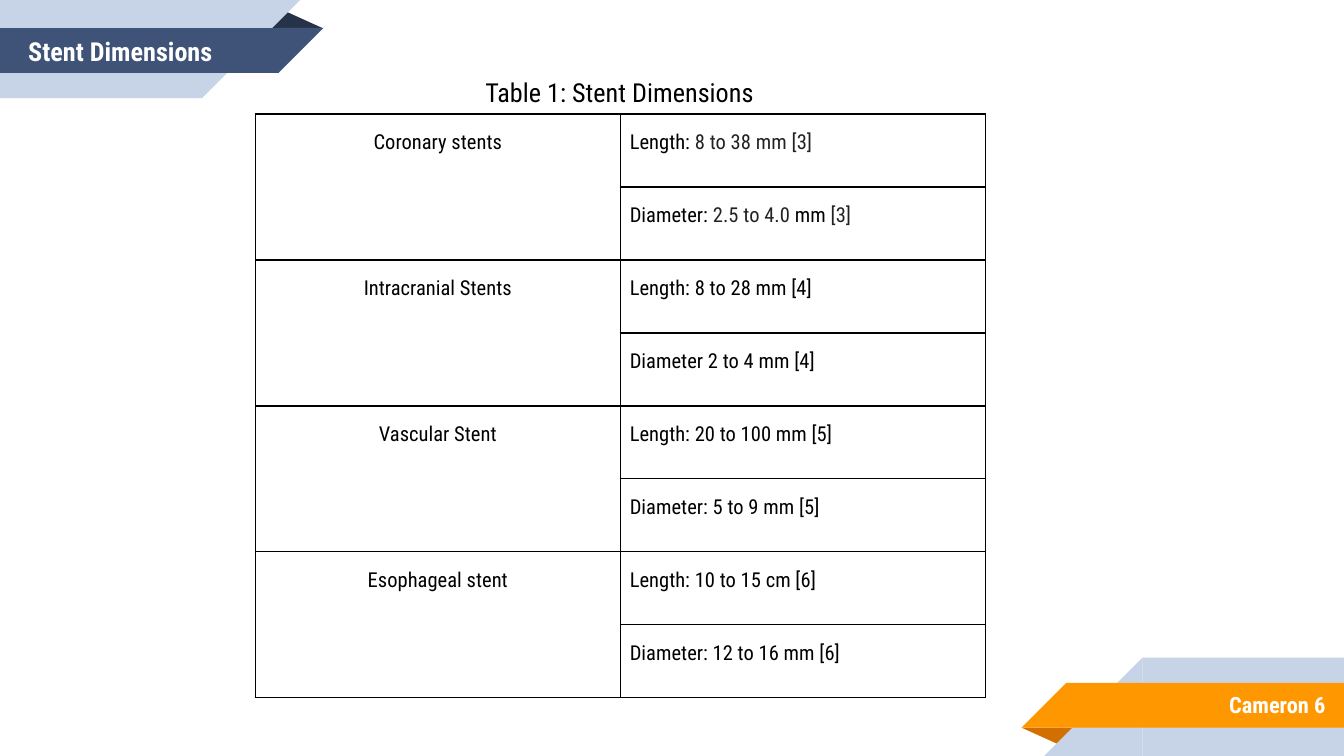
import pptx
import pptx.util
import pptx.dml.color
import pptx.enum.shapes
import pptx.enum.text
import pptx.oxml
import pptx.oxml.ns

Pt = pptx.util.Pt
SHAPE = pptx.enum.shapes.MSO_SHAPE
ALIGN = pptx.enum.text.PP_ALIGN
ANCHOR = pptx.enum.text.MSO_ANCHOR
FONT = "Roboto Condensed"


def color(hex_string):
    return pptx.dml.color.RGBColor.from_string(hex_string)


def write_text(shape, text, size, text_color, align, anchor, bold=False):
    frame = shape.text_frame
    frame.word_wrap = True
    frame.auto_size = pptx.enum.text.MSO_AUTO_SIZE.NONE
    frame.vertical_anchor = anchor
    frame.margin_left = frame.margin_right = Pt(7.2)
    frame.margin_top = frame.margin_bottom = Pt(7.2)
    frame.text = text
    paragraph = frame.paragraphs[0]
    paragraph.alignment = align
    paragraph.font.name = FONT
    paragraph.font.size = Pt(size)
    paragraph.font.bold = bold
    paragraph.font.color.rgb = color(text_color)


presentation = pptx.Presentation()
presentation.slide_width = Pt(720)
presentation.slide_height = Pt(405)
slide = presentation.slides.add_slide(presentation.slide_layouts[5])

# Corner ribbons: preset, left, top, width, height, rotation, mirrored, fill
ribbon_parts = [
    (SHAPE.ISOSCELES_TRIANGLE, 142.4, 5.8, 30.7, 9.4, 0, False, "263248"),
    (SHAPE.RECTANGLE, 0, 0, 108.2, 52.6, 180, True, "C7D3E6"),
    (SHAPE.RIGHT_TRIANGLE, 108.2, 0, 52.6, 52.6, 180, True, "C7D3E6"),
    (SHAPE.RECTANGLE, 0, 15, 149.4, 24, 180, True, "3F5378"),
    (SHAPE.RIGHT_TRIANGLE, 149.2, 15, 24, 24, 180, True, "3F5378"),
    (SHAPE.ISOSCELES_TRIANGLE, 547.2, 389.8, 30.7, 9.4, 180, False, "D26F00"),
    (SHAPE.RECTANGLE, 612, 352.4, 108, 52.6, 0, True, "C7D3E6"),
    (SHAPE.RIGHT_TRIANGLE, 559.4, 352.4, 52.6, 52.6, 0, True, "C7D3E6"),
    (SHAPE.RECTANGLE, 571, 365.8, 149.4, 24, 0, True, "FF9800"),
    (SHAPE.RIGHT_TRIANGLE, 547.2, 365.8, 24, 24, 0, True, "FF9800"),
]
for preset, left, top, width, height, rotation, mirrored, fill in ribbon_parts:
    shape = slide.shapes.add_shape(preset, Pt(left), Pt(top), Pt(width), Pt(height))
    shape.shadow.inherit = False
    shape.fill.solid()
    shape.fill.fore_color.rgb = color(fill)
    shape.line.fill.background()
    shape.rotation = rotation
    if mirrored:
        shape._element.spPr.find(pptx.oxml.ns.qn("a:xfrm")).set("flipH", "1")
    if preset == SHAPE.ISOSCELES_TRIANGLE:
        shape.adjustments[0] = 0.324

# Page label
page_label = slide.shapes.add_textbox(Pt(599.8), Pt(365), Pt(117.4), Pt(25.2))
write_text(page_label, "Cameron 6", 12, "FFFFFF", ALIGN.RIGHT, ANCHOR.MIDDLE, True)

# Table contents: each stent has two rows, each made of (text, colour) runs
BLACK, GRAY = "000000", "222222"
stents = [
    ("Coronary stents", [
        [("Length: ", BLACK), ("8 to 38 mm", GRAY), (" ", BLACK), ("[3]", GRAY)],
        [("Diameter: ", BLACK), ("2.5 to 4.0", GRAY), (" mm ", BLACK), ("[3]", GRAY)],
    ]),
    ("Intracranial Stents", [
        [("Length: 8 to 28 mm [4]", BLACK)], [("Diameter 2 to 4 mm [4]", BLACK)]]),
    ("Vascular Stent", [
        [("Length: 20 to 100 mm [5]", BLACK)], [("Diameter: 5 to 9 mm [5]", BLACK)]]),
    ("Esophageal stent", [
        [("Length: 10 to 15 cm [6]", BLACK)], [("Diameter: 12 to 16 mm [6]", BLACK)]]),
]

# Table
row_count = 2 * len(stents)
table = slide.shapes.add_table(
    row_count, 2, Pt(136.8), Pt(61), Pt(391.2), Pt(39.1 * row_count)).table
table.first_row = table.horz_banding = False
for column in table.columns:
    column.width = Pt(195.6)
for row in table.rows:
    row.height = Pt(39.1)

entries = {}
for index, (name, dimensions) in enumerate(stents):
    table.cell(2 * index, 0).merge(table.cell(2 * index + 1, 0))
    entries[2 * index, 0] = [(name, BLACK)]
    for offset, runs in enumerate(dimensions):
        entries[2 * index + offset, 1] = runs

for row_index in range(row_count):
    for column_index in range(2):
        cell = table.cell(row_index, column_index)
        cell.margin_left = cell.margin_right = Pt(5)
        cell.margin_top = cell.margin_bottom = Pt(7.2)
        for side in ("lnL", "lnR", "lnT", "lnB"):
            cell._tc.get_or_add_tcPr().append(pptx.oxml.parse_xml(
                f'<a:{side} {pptx.oxml.ns.nsdecls("a")} w="{Pt(1)}"><a:solidFill>'
                f'<a:srgbClr val="{BLACK}"/></a:solidFill></a:{side}>'))
        cell.fill.background()
        paragraph = cell.text_frame.paragraphs[0]
        paragraph.alignment = ALIGN.LEFT if column_index else ALIGN.CENTER
        paragraph.line_spacing = 1.15
        paragraph.space_before = Pt(12)
        paragraph.font.name = FONT
        paragraph.font.size = Pt(11)
        for text, text_color in entries.get((row_index, column_index), []):
            run = paragraph.add_run()
            run.text = text
            run.font.color.rgb = color(text_color)

# Table caption
caption = slide.shapes.add_textbox(Pt(222.5), Pt(33.8), Pt(218.9), Pt(27.4))
write_text(caption, "Table 1: Stent Dimensions", 14, BLACK, ALIGN.CENTER, ANCHOR.TOP)

# Title, brought in front of the ribbon
title = slide.shapes.title
title.left, title.top, title.width, title.height = Pt(7.9), Pt(11.5), Pt(321), Pt(37.4)
write_text(title, "Stent Dimensions", 14, "FFFFFF", ALIGN.LEFT, ANCHOR.TOP, True)
slide.shapes._spTree.append(title._element)

presentation.save("out.pptx")
